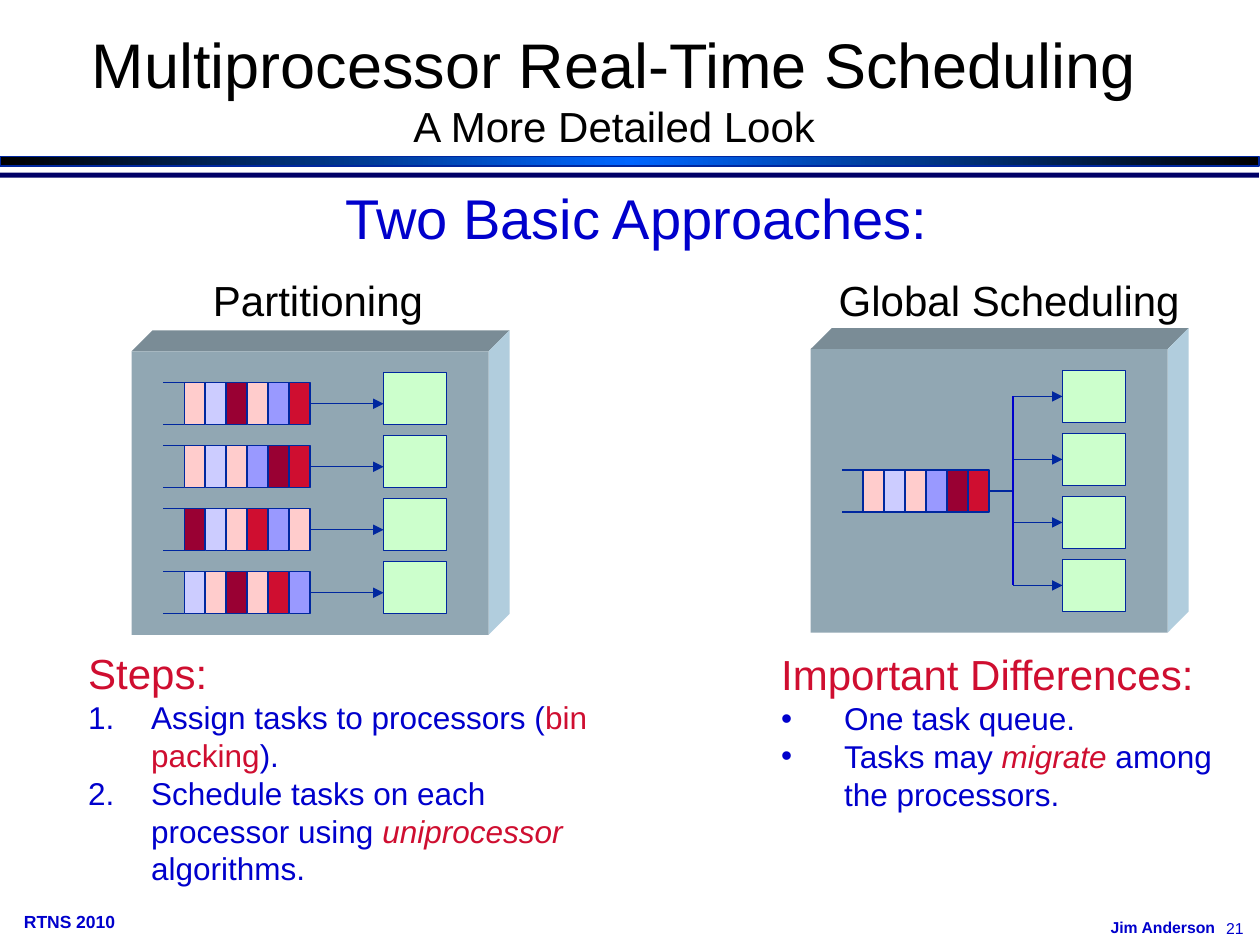
from copy import deepcopy

from lxml import etree
from pptx import Presentation
from pptx.dml.color import RGBColor
from pptx.enum.shapes import MSO_CONNECTOR, MSO_SHAPE
from pptx.enum.text import MSO_ANCHOR, MSO_AUTO_SIZE, PP_ALIGN
from pptx.oxml.ns import qn
from pptx.util import Inches, Pt

RECT = MSO_SHAPE.RECTANGLE
STRAIGHT = MSO_CONNECTOR.STRAIGHT
LEFT_SIDE, RIGHT_SIDE = 1, 3
COLUMNS, ROWS = 60, 45  # square grid, six units to the inch
COLORS = {
    "black": "000000", "blue": "0000CC", "red": "CF0E30",
    "outline": "00279F", "navy": "000066", "bright": "0066FF",
    "front": "91A7B3", "top": "7A8C96", "side": "B1CDDD", "processor": "CCFFCC",
    # task colours, as used in the queue strings
    "P": "FFCCCC", "L": "CCCCFF", "M": "990033", "B": "9999FF", "R": "CF0E30",
}


def unit(n):
    return Inches(n / 6)


def rgb(name):
    return RGBColor.from_string(COLORS[name])


class SlideBuilder:
    font = "Arial"

    def __init__(self, slide):
        self.slide = slide
        self.shapes = slide.shapes

    def style(self, shape, fill, line=None, width=0.75):
        shape.shadow.inherit = False
        if fill:
            shape.fill.solid()
            shape.fill.fore_color.rgb = rgb(fill)
        if line:
            shape.line.color.rgb = rgb(line)
            shape.line.width = Pt(width)
        else:
            shape.line.fill.background()
        return shape

    def box(self, x, y, w, h, fill, line=None, width=0.75):
        shape = self.shapes.add_shape(RECT, unit(x), unit(y), unit(w), unit(h))
        return self.style(shape, fill, line, width)

    def face(self, points, fill):
        start, *rest = [(unit(x), unit(y)) for x, y in points]
        outline = self.shapes.build_freeform(*start)
        outline.add_line_segments(rest, close=True)
        self.style(outline.convert_to_shape(), fill)

    def gradient_bar(self, x, y, w, h, names):
        bar = self.box(x, y, w, h, None, "outline", 1)
        bar.fill.gradient()
        bar.fill.gradient_angle = 0
        stop_list = bar._element.spPr.find(".//" + qn("a:gsLst"))
        stop_list.insert(1, deepcopy(stop_list[0]))
        for i, (stop, name) in enumerate(zip(bar.fill.gradient_stops, names)):
            stop.position = i / 2
            stop.color.rgb = rgb(name)

    def line(self, x1, y1, x2, y2, color="outline", width=0.75, arrow=False,
             start=None, end=None):
        link = self.shapes.add_connector(
            STRAIGHT, unit(x1), unit(y1), unit(x2), unit(y2))
        link.line.color.rgb = rgb(color)
        link.line.width = Pt(width)
        if arrow:
            etree.SubElement(link.line._get_or_add_ln(), qn("a:tailEnd"), type="triangle")
        etree.SubElement(link._element.spPr, qn("a:effectLst"))
        if start is not None:
            link.begin_connect(start, RIGHT_SIDE)
        if end is not None:
            link.end_connect(end, LEFT_SIDE)

    def set_font(self, paragraph, size, color=None, bold=False):
        font = paragraph.font
        font.name, font.size, font.bold = self.font, Pt(size), bold
        if color:
            font.color.rgb = rgb(color)

    def label(self, text, x, y, w, h, size, color="blue", bold=False):
        frame = self.shapes.add_textbox(unit(x), unit(y), unit(w), unit(h)).text_frame
        frame.word_wrap = False
        frame.text = text
        self.set_font(frame.paragraphs[0], size, color, bold)

    def place(self, holder, x, y, w, h, anchor):
        holder.left, holder.top = unit(x), unit(y)
        holder.width, holder.height = unit(w), unit(h)
        frame = holder.text_frame
        frame.auto_size = MSO_AUTO_SIZE.NONE
        frame.vertical_anchor = anchor
        return frame

    def title(self, main, detail, *area):
        frame = self.place(self.shapes.title, *area, MSO_ANCHOR.BOTTOM)
        heading = frame.paragraphs[0]
        heading.alignment = PP_ALIGN.CENTER
        heading.font.name = self.font
        heading.font.color.rgb = rgb("black")
        for text, size in ((main, 36), (detail, 24)):
            if heading.runs:
                heading.add_line_break()
            run = heading.add_run()
            run.text = text
            run.font.size = Pt(size)

    def bullet(self, paragraph, tag, **attributes):
        props = paragraph._p.get_or_add_pPr()
        props.set("marL", str(Inches(0.5)))
        props.set("indent", str(-Inches(0.5)))
        etree.SubElement(props, qn(tag), **attributes)
        paragraph.space_before = Pt(0)

    def item_list(self, index, heading, items, bullet, *area):
        """Items are lists of (text, color, italic) runs."""
        frame = self.place(self.slide.placeholders[index], *area, MSO_ANCHOR.TOP)
        first = frame.paragraphs[0]
        first.text = heading
        self.bullet(first, "a:buNone")
        self.set_font(first, 24, "red")
        for item in items:
            paragraph = frame.add_paragraph()
            self.bullet(paragraph, bullet[0], **bullet[1])
            self.set_font(paragraph, 18)
            for text, color, italic in item:
                run = paragraph.add_run()
                run.text = text
                run.font.color.rgb = rgb(color)
                run.font.italic = italic

    def panel(self, x, y, w=17, h=13.5, depth=1):
        right, bottom = x + w, y + h
        self.face([(x, y), (x + depth, y - depth),
                   (right + depth, y - depth), (right, y)], "top")
        self.face([(right, y), (right + depth, y - depth),
                   (right + depth, bottom - depth), (right, bottom)], "side")
        self.box(x, y, w, h, "front")

    def processors(self, x, y):
        return [self.box(x + 12, y + 1 + 3 * i, 3, 2.5, "processor", "outline")
                for i in range(4)]

    def queue(self, x, y, tasks):
        """Draws a queue and returns its last cell."""
        for edge in (y, y + 2):
            self.line(x, edge, x - 1, edge)
        return [self.box(x + i, y, 1, 2, task, "outline")
                for i, task in enumerate(tasks)][-1]


def main():
    deck = Presentation()
    deck.slide_width, deck.slide_height = unit(COLUMNS), unit(ROWS)
    page = SlideBuilder(deck.slides.add_slide(deck.slide_layouts[3]))

    # Header bars and footer
    page.gradient_bar(0, 7.45, 59.95, 0.47, ["black", "bright", "black"])
    page.box(0, 8.22, 59.95, 0.24, "navy")
    page.label("Jim Anderson", 52.3, 43.4, 6.25, 1.5, 9, bold=True)
    page.label("21", 57.8, 43.45, 2.1, 1.5, 9)
    page.label("RTNS 2010", 0.55, 43.1, 5.6, 1.6, 10, bold=True)

    # Headings
    page.title("Multiprocessor Real-Time Scheduling", "A More Detailed Look",
               3.5, 0, 51.5, 7.5)
    page.label("Two Basic Approaches:", 15.85, 8.45, 29.15, 3.85, 32)
    page.label("Partitioning", 9.55, 12.8, 11.2, 3, 24, "black")
    page.label("Global Scheduling", 39.35, 12.8, 17.45, 3, 24, "black")

    # Partitioning: one queue per processor
    x, y = 6.27, 16.73
    page.panel(x, y)
    page.processors(x, y)
    for i, tasks in enumerate(["PLMPBR", "PLPBMR", "MLPRBP", "LPMPRB"]):
        top = y + 1.5 + 3 * i
        last = page.queue(x + 2.5, top, tasks)
        page.line(x + 8.5, top + 1, x + 12, top + 1, arrow=True, start=last)

    # Global scheduling: one queue shared by all processors
    x, y = 38.6, 16.63
    bus = x + 9.65
    page.panel(x, y)
    last = page.queue(x + 2.5, y + 5.75, "PLPBMR")
    page.line(x + 8.5, y + 6.75, bus, y + 6.75, start=last)
    for i, processor in enumerate(page.processors(x, y)):
        middle = y + 2.25 + 3 * i
        page.line(bus, middle, x + 12, middle, arrow=True, end=processor)
    page.line(bus, y + 2.25, bus, y + 11.25, "blue", 1)

    # Explanations
    page.item_list(1, "Steps:", [
        [("Assign tasks to processors (", "blue", False),
         ("bin packing", "red", False), (").", "blue", False)],
        [("Schedule tasks on each processor using ", "blue", False),
         ("uniprocessor", "red", True), (" algorithms.", "blue", False)],
    ], ("a:buAutoNum", {"type": "arabicPeriod"}), 3.6, 30.55, 25.5, 12)
    page.item_list(2, "Important Differences:", [
        [("One task queue.", "blue", False)],
        [("Tasks may ", "blue", False), ("migrate", "red", True),
         (" among the processors.", "blue", False)],
    ], ("a:buChar", {"char": "•"}), 36.6, 30.6, 22.7, 8.4)

    deck.save("out.pptx")


if __name__ == "__main__":
    main()
